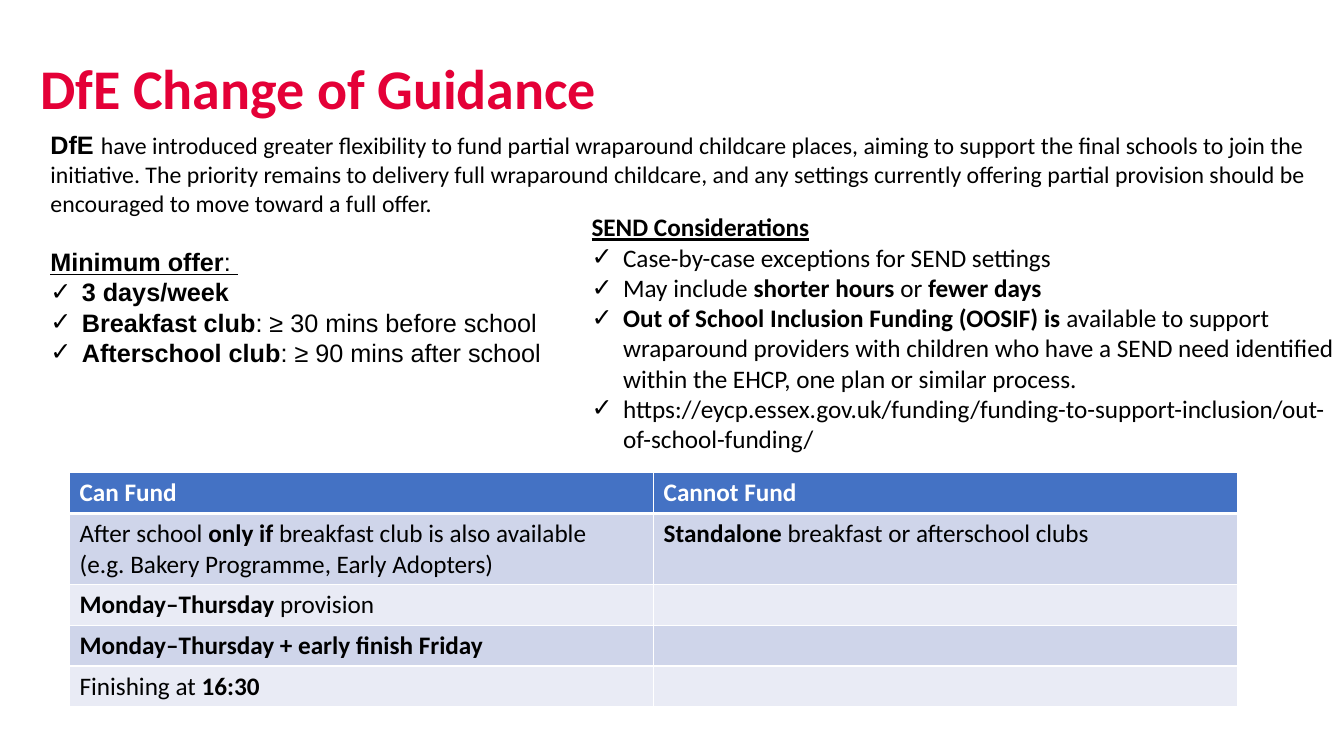
from dataclasses import dataclass

from lxml.etree import SubElement
from pptx import Presentation
from pptx.dml.color import RGBColor
from pptx.oxml.ns import qn
from pptx.util import Pt


@dataclass(frozen=True)
class Theme:
    red: str = "E40037"
    black: str = "000000"
    white: str = "FFFFFF"
    header: str = "4472C4"
    bands: tuple = ("CFD5EA", "E9EBF5")
    sans: str = "Calibri"
    plain: str = "Arial"
    title_size: float = 40
    text_size: float = 18
    intro_size: float = 17
    list_spacing: float = 21.6
    list_indent: float = 22.5


THEME = Theme()

MINIMUM_OFFER = [
    "**3 days/week**",
    "**Breakfast club**: ≥ 30 mins before school",
    "**Afterschool club**: ≥ 90 mins after school",
]
SEND_POINTS = [
    "Case-by-case exceptions for SEND settings",
    "May include **shorter hours** or **fewer days**",
    "**Out of School Inclusion Funding (OOSIF) is **available to support wraparound "
    "providers with children who have a SEND need identified within the EHCP, "
    "one plan or similar process.",
    "https://eycp.essex.gov.uk/funding/funding-to-support-inclusion/out-of-school-funding/",
]
FUNDING_ROWS = [
    ("**Can Fund**", "**Cannot Fund**"),
    ("After school **only if** breakfast club is also available\n"
     "(e.g. Bakery Programme, Early Adopters)",
     "**Standalone** breakfast or afterschool clubs"),
    ("**Monday–Thursday** provision", ""),
    ("**Monday–Thursday + early finish Friday**", ""),
    ("Finishing at **16:30**", ""),
]


def write(paragraph, text, font=THEME.sans, size=THEME.text_size,
          color=THEME.black, underline=False):
    """Append text to a paragraph; ** switches bold and a newline breaks the line."""
    for index, part in enumerate(text.split("**")):
        for line_index, line in enumerate(part.split("\n")):
            if line_index:
                paragraph.add_line_break()
            if not line:
                continue
            run = paragraph.add_run()
            run.text = line
            run.font.name = font
            run.font.size = Pt(size)
            run.font.bold = index % 2 == 1
            run.font.underline = underline
            run.font.color.rgb = RGBColor.from_string(color)


def add_text_box(slide, left, top, width, height):
    frame = slide.shapes.add_textbox(Pt(left), Pt(top), Pt(width), Pt(height)).text_frame
    frame.word_wrap = True
    frame.margin_left = frame.margin_top = frame.margin_right = frame.margin_bottom = 0
    return frame


def add_tick(paragraph):
    properties = paragraph._p.get_or_add_pPr()
    properties.set("marL", str(Pt(THEME.list_indent)))
    properties.set("indent", str(-Pt(THEME.list_indent)))
    SubElement(properties, qn("a:buFont"), typeface=THEME.plain)
    SubElement(properties, qn("a:buChar"), char="✓")


def add_checklist(frame, heading, points, font):
    write(frame.paragraphs[0], heading, font=font, underline=True)
    for point in points:
        paragraph = frame.add_paragraph()
        add_tick(paragraph)
        write(paragraph, point, font=font)
    for paragraph in frame.paragraphs:
        paragraph.line_spacing = Pt(THEME.list_spacing)


def set_border(cell, side, width, color):
    line = SubElement(cell._tc.get_or_add_tcPr(), qn(f"a:{side}"), w=str(Pt(width)))
    fill = SubElement(line, qn("a:solidFill"))
    SubElement(fill, qn("a:srgbClr"), val=color)


def add_funding_table(slide, left, top, width, row_height):
    row_count, column_count = len(FUNDING_ROWS), len(FUNDING_ROWS[0])
    table = slide.shapes.add_table(row_count, column_count, Pt(left), Pt(top),
                                   Pt(width), Pt(row_height * row_count)).table
    for row_index, texts in enumerate(FUNDING_ROWS):
        is_header = row_index == 0
        for column_index, text in enumerate(texts):
            cell = table.cell(row_index, column_index)
            if is_header:
                set_border(cell, "lnB", 3, THEME.white)
            fill = THEME.header if is_header else THEME.bands[(row_index - 1) % 2]
            cell.fill.solid()
            cell.fill.fore_color.rgb = RGBColor.from_string(fill)
            write(cell.text_frame.paragraphs[0], text,
                  color=THEME.white if is_header else THEME.black)


def main():
    presentation = Presentation()
    presentation.slide_width, presentation.slide_height = Pt(960), Pt(540)
    slide = presentation.slides.add_slide(presentation.slide_layouts[6])

    title = add_text_box(slide, 28.8, 38.2, 417.6, 50)
    write(title.paragraphs[0], "**DfE Change of Guidance**",
          size=THEME.title_size, color=THEME.red)

    intro = add_text_box(slide, 36, 92.5, 906.5, 63)
    write(intro.paragraphs[0], "**DfE **", font=THEME.plain)
    write(intro.paragraphs[0],
          "have introduced greater flexibility to fund partial wraparound childcare places, "
          "aiming to support the final schools to join the initiative. The priority remains "
          "to delivery full wraparound childcare, and any settings currently offering partial "
          "provision should be encouraged to move toward a full offer.",
          size=THEME.intro_size)

    minimum_offer = add_text_box(slide, 36, 176, 380, 88)
    add_checklist(minimum_offer, "**Minimum offer**: ", MINIMUM_OFFER, THEME.plain)

    send = add_text_box(slide, 422.6, 151.2, 537.1, 178.6)
    add_checklist(send, "**SEND Considerations**", SEND_POINTS, THEME.sans)

    add_funding_table(slide, 49.7, 337.7, 834.4, 29.2)
    presentation.save("out.pptx")


if __name__ == "__main__":
    main()
